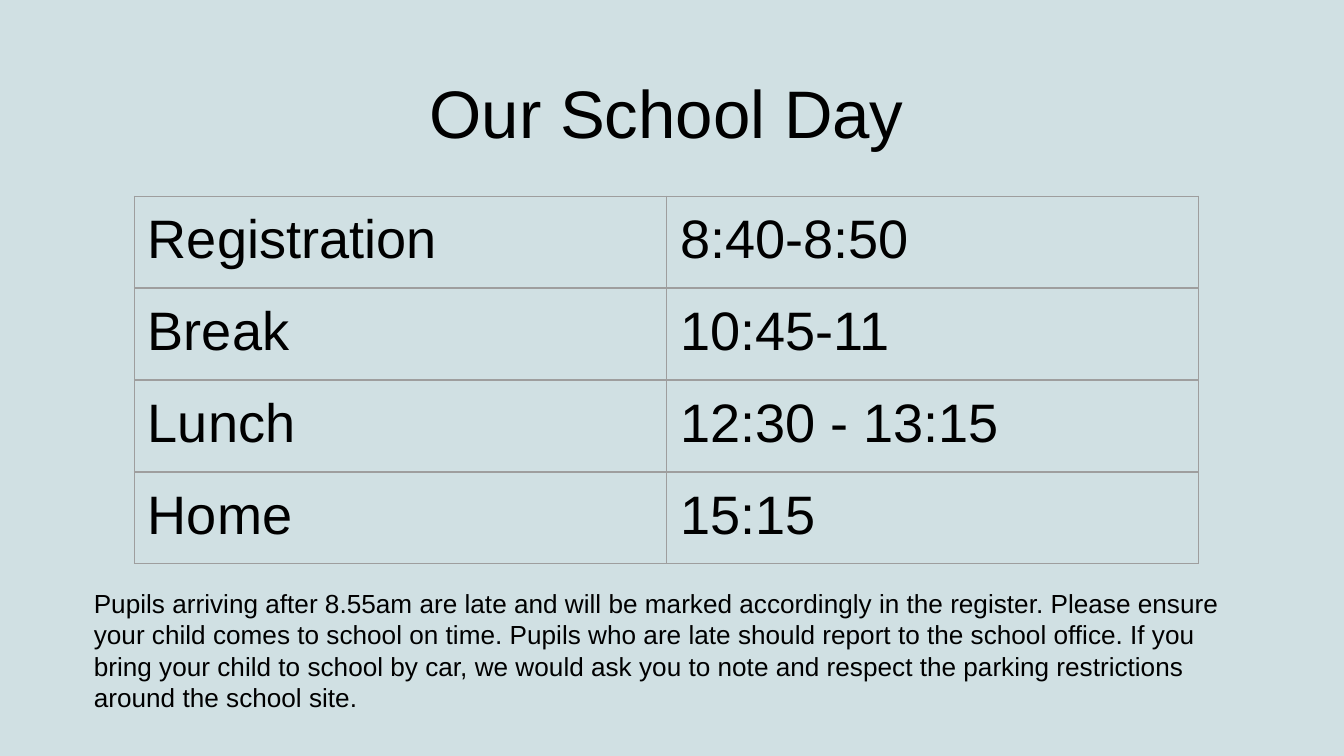
from dataclasses import dataclass

from lxml import etree
from pptx import Presentation
from pptx.dml.color import RGBColor
from pptx.enum.text import MSO_ANCHOR, PP_ALIGN
from pptx.oxml.ns import qn
from pptx.util import Inches, Pt

LEFT, CENTER = PP_ALIGN.LEFT, PP_ALIGN.CENTER
TOP, MIDDLE = MSO_ANCHOR.TOP, MSO_ANCHOR.MIDDLE
BLACK = RGBColor(0x00, 0x00, 0x00)
PALE = RGBColor(0xD0, 0xE0, 0xE3)
GREY = RGBColor(0x9E, 0x9E, 0x9E)
PAD = Inches(0.1)
SIDES = ("left", "top", "right", "bottom")
TITLE_ONLY = 5


@dataclass
class Event:
    name: str
    time: str


EVENTS = [
    Event("Registration", "8:40-8:50"),
    Event("Break", "10:45-11"),
    Event("Lunch", "12:30 - 13:15"),
    Event("Home", "15:15"),
]
NOTE = (
    "Pupils arriving after 8.55am are late and will be marked accordingly in "
    "the register. Please ensure your child comes to school on time. Pupils "
    "who are late should report to the school office. If you bring your child "
    "to school by car, we would ask you to note and respect the parking "
    "restrictions around the school site."
)


def place(shape, left: float, top: float, width: float, height: float) -> None:
    shape.left, shape.top = Inches(left), Inches(top)
    shape.width, shape.height = Inches(width), Inches(height)


def pad(box) -> None:
    """Give a cell or text frame the same margin on each side."""
    for side in SIDES:
        setattr(box, f"margin_{side}", PAD)


def write(frame, text: str, size: float, align=LEFT) -> None:
    frame.text = text
    para = frame.paragraphs[0]
    para.alignment = align
    font = para.runs[0].font
    font.color.rgb = BLACK
    style = {"name": "Arial", "size": Pt(size), "bold": False}
    for key, value in style.items():
        setattr(font, key, value)


def border(cell) -> None:
    """Draw thin grey lines; they must come before the cell's fill."""
    props = cell._tc.get_or_add_tcPr()
    for spot, tag in enumerate(("a:lnL", "a:lnR", "a:lnT", "a:lnB")):
        line = etree.Element(qn(tag), w=str(Pt(0.75)))
        fill = etree.SubElement(line, qn("a:solidFill"))
        etree.SubElement(fill, qn("a:srgbClr"), val=str(GREY))
        props.insert(spot, line)


def add_times(slide, events: list[Event]) -> None:
    frame = slide.shapes.add_table(
        len(events), 2, Inches(1), Inches(1.46), Inches(7.92), Inches(2.73)
    )
    table = frame.table
    table.first_row = table.horz_banding = False
    for row, event in enumerate(events):
        for col, text in enumerate((event.name, event.time)):
            cell = table.cell(row, col)
            cell.fill.background()
            border(cell)
            write(cell.text_frame, text, 29)
            pad(cell)
            cell.vertical_anchor = TOP


def main() -> None:
    deck = Presentation()
    deck.slide_width, deck.slide_height = Inches(10), Inches(10 * 9 / 16)
    slide = deck.slides.add_slide(deck.slide_layouts[TITLE_ONLY])
    back = slide.background.fill
    back.solid()
    back.fore_color.rgb = PALE

    # Title
    title = slide.shapes.title
    place(title, 0.3, 0.37, 9.32, 0.92)
    write(title.text_frame, "Our School Day", 36, CENTER)
    pad(title.text_frame)
    title.text_frame.vertical_anchor = MIDDLE

    # Note on late pupils
    note = slide.shapes.add_textbox(0, 0, 0, 0)
    place(note, 0.6, 4.27, 8.8, 1.14)
    write(note.text_frame, NOTE, 14)
    note.text_frame.word_wrap = True
    note.text_frame.paragraphs[0].line_spacing = Pt(16.8)
    pad(note.text_frame)

    # Times of the day
    add_times(slide, EVENTS)
    deck.save("out.pptx")


if __name__ == "__main__":
    main()
